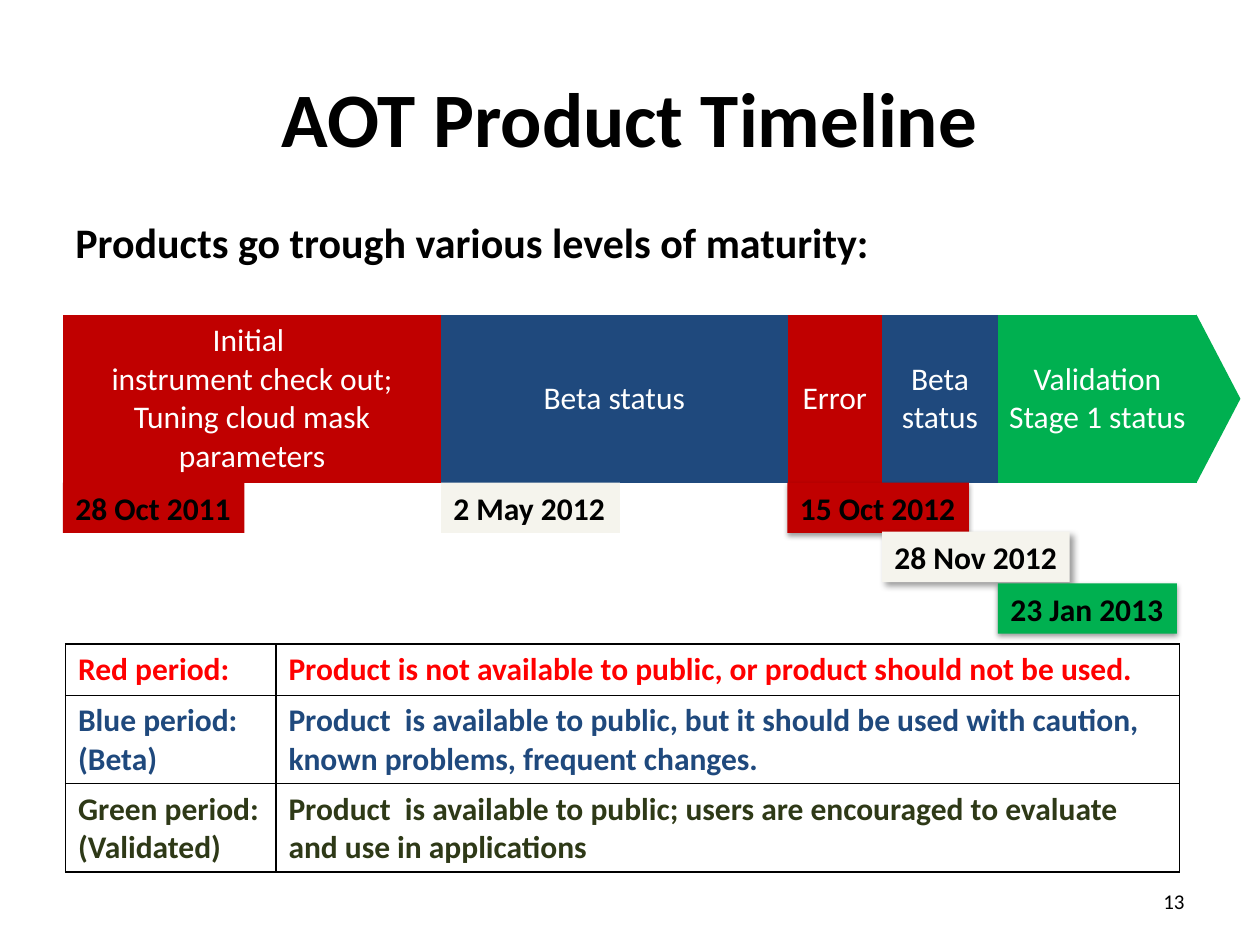
"""Build the AOT product timeline slide."""
from itertools import accumulate

from lxml.etree import SubElement
from pptx import Presentation
from pptx.dml.color import RGBColor
from pptx.enum.shapes import MSO_SHAPE as Shape
from pptx.enum.text import MSO_ANCHOR as Anchor, MSO_AUTO_SIZE as AutoSize, PP_ALIGN as Align
from pptx.oxml.ns import qn
from pptx.util import Inches, Pt

RED, BLUE, GREEN, CREAM = "C00000", "1F497D", "00B050", "F5F4ED"
BLACK, WHITE = "000000", "FFFFFF"
PLAIN_TABLE = "{2D5ABB26-0587-4C30-8999-92F81FD0307C}"
SOFT = (38, 3.1, 1.6, 90)
STRONG = (40, 4, 3, 45)
STAGES = [
    (3, RED, "Initial \ninstrument check out;\nTuning cloud mask parameters"),
    (2.75, BLUE, "Beta status"),
    (0.75, RED, "Error"),
    (0.92, BLUE, "Beta status"),
    (1.58, GREEN, "Validation Stage 1 status"),
]
DATES = [
    ("28 Oct 2011", 1.44, 3.83, RED, None),
    ("2 May 2012", 1.42, 3.83, CREAM, None),
    ("15 Oct 2012", 1.44, 3.83, RED, SOFT),
    ("28 Nov 2012", 1.49, 4.22, CREAM, STRONG),
    ("23 Jan 2013", 1.42, 4.63, GREEN, SOFT),
]
PERIODS = [
    ("FF0000", "Red period:",
     "Product is not available to public, or product should not be used."),
    (BLUE, "Blue period:\n(Beta)",
     "Product  is available to public, but it should be used with caution, "
     "known problems, frequent changes."),
    ("2E3917", "Green period:\n(Validated)",
     "Product  is available to public; users are encouraged to evaluate "
     "and use in applications"),
]


def color(value):
    """Turn a hex string into a colour."""
    return RGBColor.from_string(value)


def assign(target, values):
    """Set each attribute named in values."""
    for name, value in values.items():
        setattr(target, name, value)


class SlideBuilder:
    """Holds the style and the current slide."""

    font = "Calibri"

    def __init__(self, presentation):
        """Start a title-only slide."""
        self.slide = presentation.slides.add_slide(presentation.slide_layouts[5])

    def fill_text(self, frame, text, size=18, ink=BLACK, bold=True, align=Align.LEFT,
                  **frame_format):
        """Fill a text frame with styled paragraphs."""
        frame.text = text
        assign(frame, frame_format)
        for paragraph in frame.paragraphs:
            paragraph.alignment = align
            assign(paragraph.font, {"name": self.font, "size": Pt(size), "bold": bold})
            paragraph.font.color.rgb = color(ink)

    def title(self, text, box):
        """Move and format the title placeholder."""
        title = self.slide.shapes.title
        assign(title, dict(zip(("left", "top", "width", "height"), map(Inches, box))))
        self.fill_text(title.text_frame, text, 44, align=Align.CENTER,
                       vertical_anchor=Anchor.MIDDLE)

    def text(self, text, box, size, **text_format):
        """Add a wrapping text box."""
        shape = self.slide.shapes.add_textbox(*map(Inches, box))
        self.fill_text(shape.text_frame, text, size, word_wrap=True, **text_format)

    def shape(self, kind, box, fill, rotation=0):
        """Add a flat preset shape."""
        shape = self.slide.shapes.add_shape(kind, *map(Inches, box))
        shape.shadow.inherit = False
        shape.rotation = rotation
        shape.fill.solid()
        shape.fill.fore_color.rgb = color(fill)
        shape.line.fill.background()
        return shape

    def label(self, text, box, fill, shadow=None):
        """Add a filled date label with an optional shadow."""
        shape = self.shape(Shape.RECTANGLE, box, fill)
        self.fill_text(shape.text_frame, text, word_wrap=False, vertical_anchor=Anchor.TOP,
                       auto_size=AutoSize.SHAPE_TO_FIT_TEXT)
        if shadow:
            self.cast_shadow(shape, *shadow)

    def cast_shadow(self, shape, opacity, blur, distance, angle):
        """Give a shape an outer shadow."""
        effects = shape.element.spPr.find(qn("a:effectLst"))
        outer = SubElement(effects, qn("a:outerShdw"), blurRad=str(Pt(blur)),
                           dist=str(Pt(distance)), dir=str(angle * 60000), rotWithShape="0")
        tint = SubElement(outer, qn("a:srgbClr"), val=BLACK)
        SubElement(tint, qn("a:alpha"), val=str(opacity * 1000))

    def table(self, left, top, widths, heights):
        """Add an unstyled table with the given column and row sizes."""
        box = map(Inches, (left, top, sum(widths), sum(heights)))
        table = self.slide.shapes.add_table(len(heights), len(widths), *box).table
        assign(table, {"first_row": False, "horz_banding": False})
        table._tbl.tblPr.find(qn("a:tableStyleId")).text = PLAIN_TABLE
        for column, width in zip(table.columns, widths):
            column.width = Inches(width)
        for row, height in zip(table.rows, heights):
            row.height = Inches(height)
        return table

    def border(self, cell):
        """Draw a thin black line on every side of a cell."""
        properties = cell._tc.get_or_add_tcPr()
        for side in ("a:lnL", "a:lnR", "a:lnT", "a:lnB"):
            line = SubElement(properties, qn(side), w=str(Pt(1)))
            SubElement(SubElement(line, qn("a:solidFill")), qn("a:srgbClr"), val=BLACK)

    def stages(self, left, top, height):
        """Add the coloured timeline bar."""
        table = self.table(left, top, [stage[0] for stage in STAGES], [height])
        for cell, (_, fill, text) in zip(table.iter_cells(), STAGES):
            cell.fill.solid()
            cell.fill.fore_color.rgb = color(fill)
            cell.vertical_anchor = Anchor.MIDDLE
            self.fill_text(cell.text_frame, text, ink=WHITE, bold=False, align=Align.CENTER)
        assign(cell, dict.fromkeys(
            ("margin_left", "margin_right", "margin_top", "margin_bottom"), 0))

    def periods(self, left, top):
        """Add the bordered legend of periods."""
        table = self.table(left, top, [1.67, 7.17], [0.41, 0.7, 0.7])
        for row, (ink, *texts) in zip(table.rows, PERIODS):
            for cell, text in zip(row.cells, texts):
                self.border(cell)
                cell.fill.background()
                self.fill_text(cell.text_frame, text, ink=ink)


def main():
    """Build and save the slide."""
    presentation = Presentation()
    assign(presentation, {"slide_width": Inches(10), "slide_height": Inches(7.5)})
    builder = SlideBuilder(presentation)
    builder.title("AOT Product Timeline", (0.5, 0.3, 9, 1.25))
    builder.text("13", (7.17, 6.95, 2.33, 0.4), 12, bold=False, align=Align.RIGHT,
                 vertical_anchor=Anchor.MIDDLE)
    builder.stages(0.5, 2.5, 1.33)
    starts = accumulate((stage[0] for stage in STAGES), initial=0.5)
    for start, (text, width, top, fill, shadow) in zip(starts, DATES):
        builder.label(text, (start, top, width, 0.4), fill, shadow)
    builder.periods(0.52, 5.11)
    builder.shape(Shape.ISOSCELES_TRIANGLE, (9, 2.99, 1.34, 0.35), GREEN, rotation=90)
    builder.text("Products go trough various levels of maturity:", (0.5, 1.67, 9, 0.5), 24,
                 auto_size=AutoSize.SHAPE_TO_FIT_TEXT)
    presentation.save("out.pptx")


if __name__ == "__main__":
    main()
